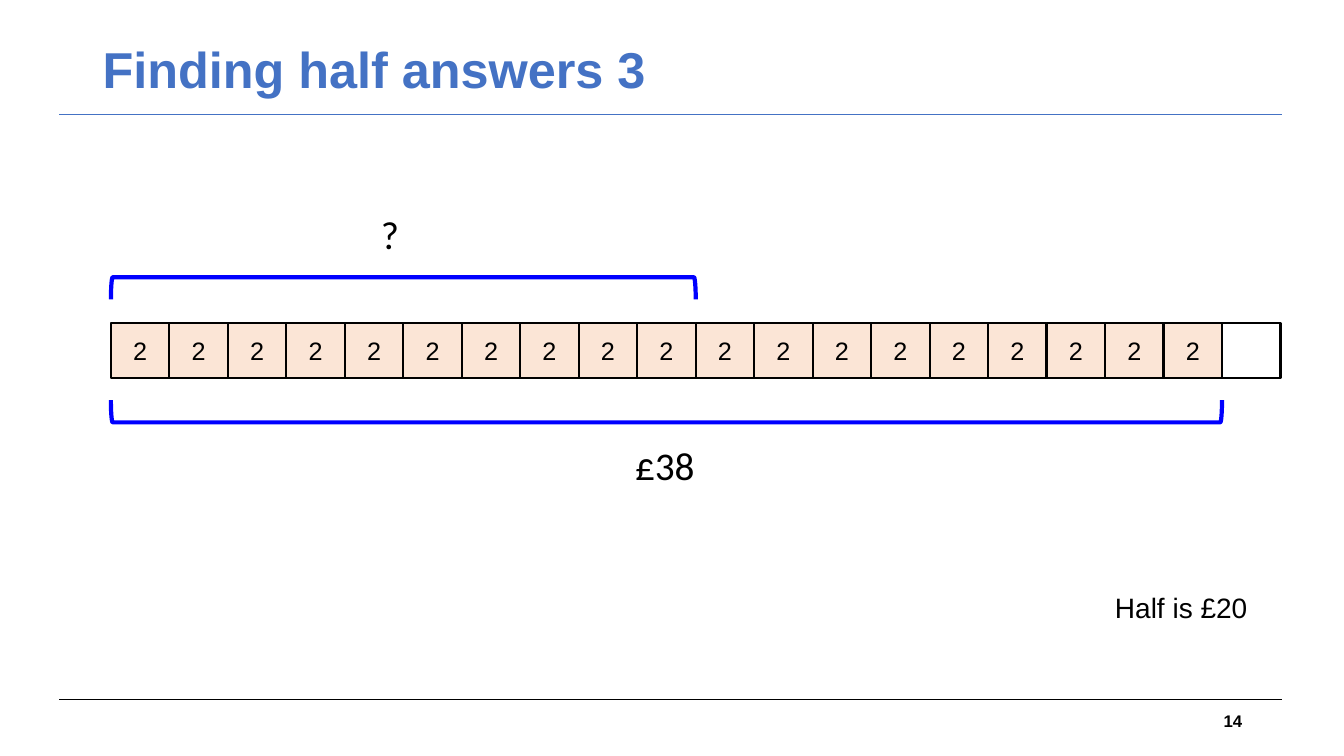
from pptx import Presentation
from pptx.dml.color import RGBColor
from pptx.enum.shapes import MSO_CONNECTOR as Link, MSO_SHAPE as Shape
from pptx.enum.text import MSO_ANCHOR as Anchor, PP_ALIGN as Align
from pptx.util import Inches, Pt
from lxml.etree import SubElement
from pptx.oxml.ns import qn

BLACK = RGBColor(0x00, 0x00, 0x00)
BLUE = RGBColor(0x44, 0x72, 0xC4)
BRIGHT = RGBColor(0x00, 0x00, 0xFF)
PEACH = RGBColor(0xFB, 0xE5, 0xD6)

LABELS = [
    ("Finding half answers 3", (0.92, 0.4, 11.5, 1.45),
     dict(size=36, color=BLUE, bold=True, space=0.9)),
    ("14", (9.42, 6.95, 3, 0.4),
     dict(size=12, bold=True, align=Align.RIGHT, anchor=Anchor.MIDDLE)),
    ("?", (3.68, 2.04, 0.38, 0.57), dict(size=28, font="Calibri")),
    ("£38", (6.2, 4.33, 0.93, 0.57), dict(size=28, font="Calibri")),
    ("Half is £20", (10.96, 5.81, 2.35, 0.44), dict(size=20)),
]
RULES = [(1.14, BLUE), (6.94, BLACK)]
CELLS = ["2"] * 19 + [""]
BRACES = [(10, 2.86, 90), (19, 4.08, 270)]

LEFT, TOP, STEP, HIGH = 1.1, 3.2, 0.58, 0.55
DEPTH = 0.22

deck = Presentation()
deck.slide_width, deck.slide_height = Inches(13.33), Inches(7.5)
slide = deck.slides.add_slide(deck.slide_layouts[6])


def write(shape, text, size=18, font="Arial", color=BLACK, bold=False,
          align=Align.LEFT, anchor=Anchor.TOP, space=1.0):
    frame = shape.text_frame
    frame.word_wrap = True
    frame.vertical_anchor = anchor
    para = frame.paragraphs[0]
    para.alignment = align
    para.line_spacing = space
    run = para.add_run()
    run.text = text
    run.font.name, run.font.size, run.font.bold = font, Pt(size), bold
    run.font.color.rgb = color


def draw(kind, box, color, width, fill=None):
    shape = slide.shapes.add_shape(kind, *map(Inches, box))
    shape.shadow.inherit = False
    shape.line.color.rgb = color
    shape.line.width = Pt(width)
    if fill is None:
        shape.fill.background()
    else:
        shape.fill.solid()
        shape.fill.fore_color.rgb = fill
    return shape


for y, color in RULES:
    rule = slide.shapes.add_connector(
        Link.STRAIGHT, Inches(0.59), Inches(y), Inches(12.72), Inches(y))
    rule.line.color.rgb = color
    rule.line.width = Pt(0.75)
    SubElement(rule.line._get_or_add_ln().getparent(), qn("a:effectLst"))

for count, mid, turn in BRACES:
    span = count * STEP
    box = (LEFT + (span - DEPTH) / 2, mid - span / 2, DEPTH, span)
    brace = draw(Shape.LEFT_BRACKET, box, BRIGHT, 3)
    brace.adjustments[0] = 0.08
    brace.rotation = turn

for i, text in enumerate(CELLS):
    box = (LEFT + i * STEP, TOP, STEP, HIGH)
    cell = draw(Shape.RECTANGLE, box, BLACK, 1.5, PEACH if text else None)
    if text:
        write(cell, text, align=Align.CENTER, anchor=Anchor.MIDDLE)

for text, box, style in LABELS:
    write(slide.shapes.add_textbox(*map(Inches, box)), text, **style)

deck.save("out.pptx")
